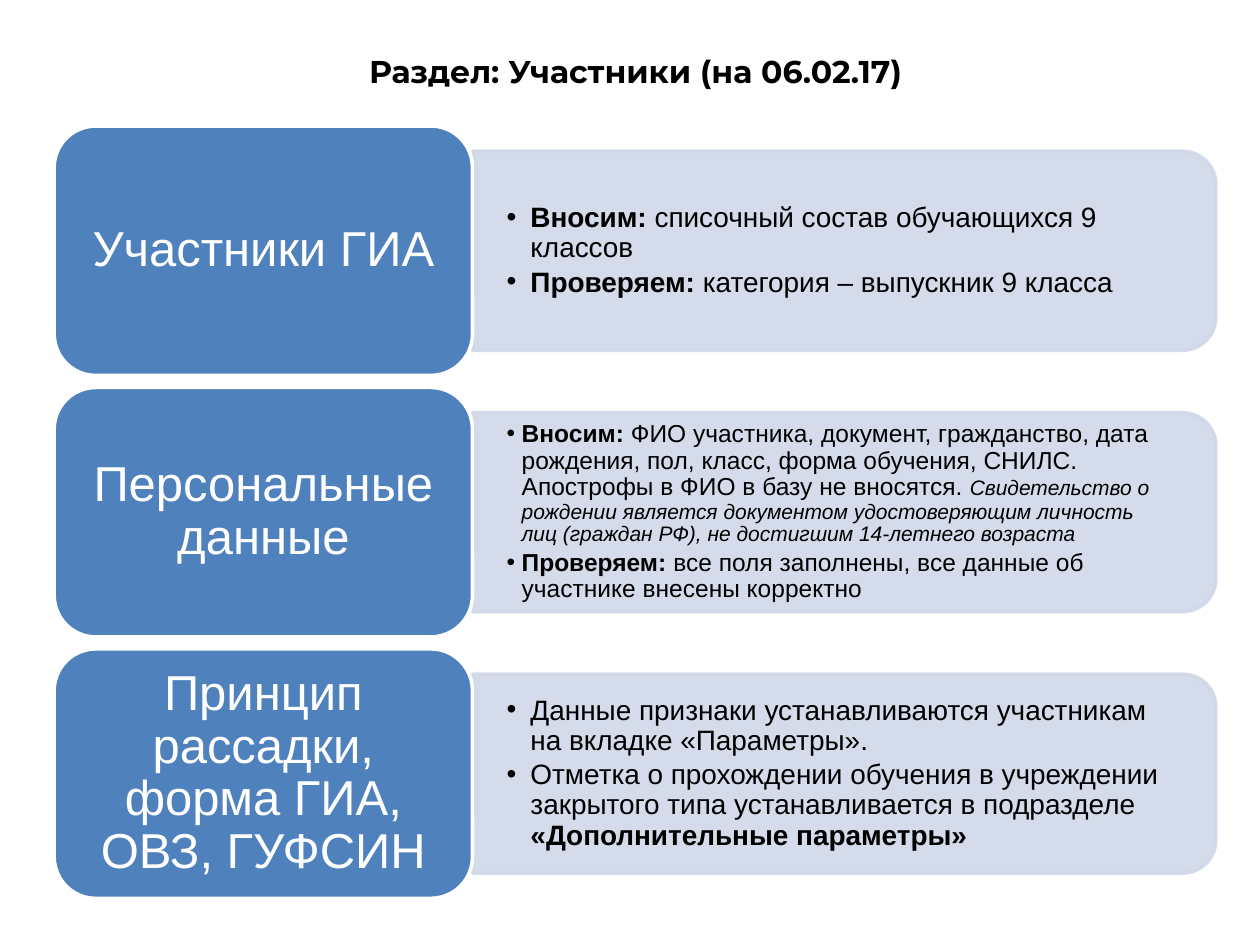
from lxml import etree
from pptx import Presentation
from pptx import util as u
from pptx.dml.color import RGBColor
from pptx.enum import shapes, text
from pptx.oxml.ns import qn

COLORS = {"card": "4F81BD", "panel": "D0D8E8", "light": "FFFFFF", "dark": "000000"}
TOP, ROW_STEP = 1.0, 2.075
CARD_LEFT, CARD_WIDTH, CARD_HEIGHT = 0.43, 3.32, 1.98
PANEL_LEFT, PANEL_WIDTH, PANEL_HEIGHT = CARD_LEFT + CARD_WIDTH, 5.9, 1.58
LIST_WIDTH, LIST_HEIGHT = 5.82, 1.43

# Each row: card label, list size, list indent, paragraphs of (text, style, size) spans
ROWS = [
    ("Участники ГИА", 16, 0.19, [
        [("Вносим: ", "bold", 16),
         ("списочный состав обучающихся 9 классов", "plain", 16)],
        [("Проверяем:", "bold", 16),
         (" категория – выпускник 9 класса", "plain", 16)],
    ]),
    ("Персональные данные", 14, 0.12, [
        [("Вносим: ", "bold", 14),
         ("ФИО участника, документ, гражданство, дата рождения, пол, класс, "
          "форма обучения, СНИЛС. Апострофы в ФИО в базу не вносятся. ", "plain", 14),
         ("Свидетельство о рождении является документом удостоверяющим личность "
          "лиц (граждан РФ), не достигшим 14-летнего возраста", "italic", 12)],
        [("Проверяем: ", "bold", 14),
         ("все поля заполнены, все данные об участнике внесены корректно", "plain", 14)],
    ]),
    ("Принцип рассадки, форма ГИА, ОВЗ, ГУФСИН", 16, 0.19, [
        [("Данные признаки устанавливаются участникам на вкладке «Параметры».", "plain", 16)],
        [("Отметка о прохождении обучения в учреждении закрытого типа "
          "устанавливается в подразделе ", "plain", 16),
         ("«Дополнительные параметры»", "bold", 16)],
    ]),
]


def color(name):
    return RGBColor.from_string(COLORS[name])


def format_span(span, size, color_name, style="plain", font="Arial"):
    span.font.name = font
    span.font.size = u.Pt(size)
    span.font.color.rgb = color(color_name)
    span.font.bold = style == "bold"
    span.font.italic = style == "italic"


def set_frame(frame, side, edge):
    frame.word_wrap = True
    frame.vertical_anchor = text.MSO_ANCHOR.MIDDLE
    frame.margin_left = frame.margin_right = u.Inches(side)
    frame.margin_top = frame.margin_bottom = u.Inches(edge)


def add_block(page, kind, left, top, width, height, fill, line):
    block = page.shapes.add_shape(kind, *map(u.Inches, (left, top, width, height)))
    block.shadow.inherit = False
    block.fill.solid()
    block.fill.fore_color.rgb = color(fill)
    block.line.color.rgb = color(line)
    block.line.width = u.Pt(2)
    return block


def add_panel(page, middle):
    """Add the pale panel: an upright shape turned so its round end faces right."""
    panel = add_block(page, shapes.MSO_SHAPE.ROUND_2_SAME_RECTANGLE,
                      PANEL_LEFT + (PANEL_WIDTH - PANEL_HEIGHT) / 2,
                      middle - PANEL_WIDTH / 2,
                      PANEL_HEIGHT, PANEL_WIDTH, "panel", "panel")
    panel.rotation = 90
    for paint in panel._element.spPr.iter(qn("a:srgbClr")):
        etree.SubElement(paint, qn("a:alpha"), val="90000")


def add_bullet(para, indent):
    properties = para._p.get_or_add_pPr()
    properties.set("marL", str(u.Inches(indent)))
    properties.set("indent", str(-u.Inches(indent)))
    etree.SubElement(properties, qn("a:buFont"), typeface="Arial")
    etree.SubElement(properties, qn("a:buChar"), char="•")


def add_list(page, middle, size, indent, paragraphs):
    box = page.shapes.add_textbox(u.Inches(PANEL_LEFT), u.Inches(middle - LIST_HEIGHT / 2),
                                  u.Inches(LIST_WIDTH), u.Inches(LIST_HEIGHT))
    frame = box.text_frame
    set_frame(frame, 0.27, 0.14)
    for number, spans in enumerate(paragraphs):
        para = frame.add_paragraph() if number else frame.paragraphs[0]
        para.line_spacing = 0.9
        para.space_after = u.Pt(size * 0.15)
        add_bullet(para, indent)
        for words, style, span_size in spans:
            span = para.add_run()
            span.text = words
            format_span(span, span_size, "dark", style)


def add_card(page, top, label):
    """Add a card; its rounded corners already inset the text, so margins stay small."""
    card = add_block(page, shapes.MSO_SHAPE.ROUNDED_RECTANGLE, CARD_LEFT, top,
                     CARD_WIDTH, CARD_HEIGHT, "card", "light")
    set_frame(card.text_frame, 0.12, 0.06)
    card.text_frame.text = label
    para = card.text_frame.paragraphs[0]
    para.alignment = text.PP_ALIGN.CENTER
    para.line_spacing = 0.9
    format_span(para.runs[0], 28, "light")


def set_title(page, words):
    title = page.shapes.title
    title.left, title.top, title.width, title.height = map(u.Inches, (0.91, 0.36, 8.27, 0.4))
    title.text_frame.text = words
    title.text_frame.auto_size = text.MSO_AUTO_SIZE.SHAPE_TO_FIT_TEXT
    para = title.text_frame.paragraphs[0]
    para.alignment = text.PP_ALIGN.CENTER
    format_span(para.runs[0], 18, "dark", "bold", "Montserrat")


def main():
    deck = Presentation()
    deck.slide_width, deck.slide_height = u.Inches(10), u.Inches(7.5)
    page = deck.slides.add_slide(deck.slide_layouts.get_by_name("Title Only"))
    set_title(page, "Раздел: Участники (на 06.02.17)")
    for row, (label, size, indent, paragraphs) in enumerate(ROWS):
        top = TOP + row * ROW_STEP
        middle = top + CARD_HEIGHT / 2
        add_panel(page, middle)
        add_list(page, middle, size, indent, paragraphs)
        add_card(page, top, label)
    deck.save("out.pptx")


if __name__ == "__main__":
    main()
